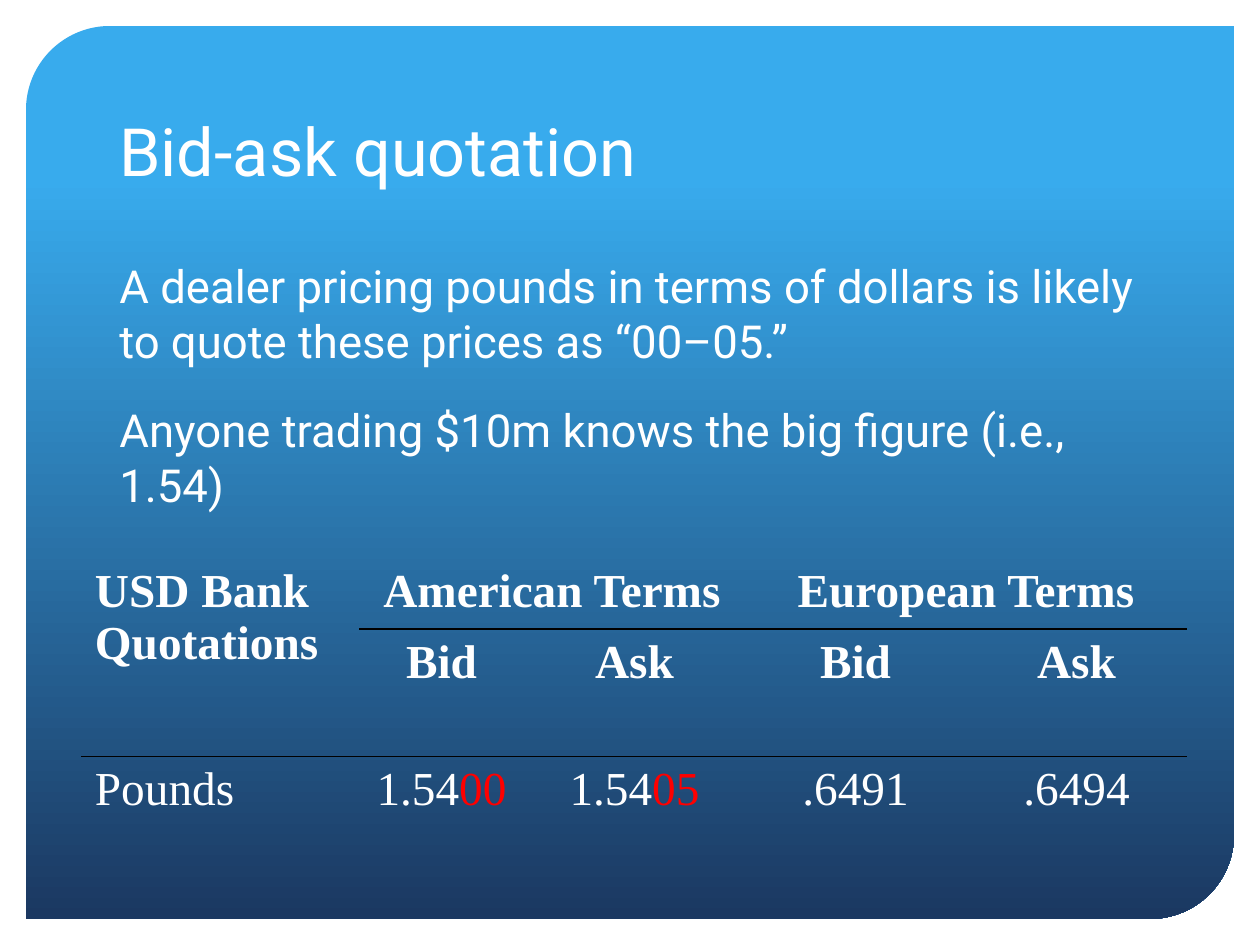
from lxml.etree import SubElement
from pptx import Presentation
from pptx.dml.color import RGBColor
from pptx.enum.shapes import MSO_SHAPE
from pptx.enum.text import MSO_ANCHOR, PP_ALIGN
from pptx.oxml.ns import qn
from pptx.util import Emu, Pt

WHITE = RGBColor(0xFF, 0xFF, 0xFF)
RED = RGBColor(0xFF, 0x00, 0x00)
SKY = RGBColor(0x38, 0xAB, 0xED)
NAVY = RGBColor(0x1B, 0x38, 0x61)
BLACK = "000000"


def px(*lengths):
    return [Emu(length * 914400 // 126) for length in lengths]


def set_borders(cell, black_sides):
    """Draw 1 pt black lines on the given sides and none on the others."""
    properties = cell._tc.get_or_add_tcPr()
    for position, side in enumerate(("L", "R", "T", "B")):
        line = SubElement(properties, qn(f"a:ln{side}"), w="12700")
        if side in black_sides:
            fill = SubElement(line, qn("a:solidFill"))
            SubElement(fill, qn("a:srgbClr"), val=BLACK)
        else:
            SubElement(line, qn("a:noFill"))
        properties.insert(position, line)


prs = Presentation()
prs.slide_width, prs.slide_height = px(1260, 945)
slide = prs.slides.add_slide(prs.slide_layouts[6])

# Gradient panel
panel = slide.shapes.add_shape(MSO_SHAPE.ROUND_2_DIAG_RECTANGLE, *px(26, 26, 1208, 893))
panel.adjustments[0] = 0.094
panel.adjustments[1] = 0
panel.shadow.inherit = False
panel.line.fill.background()
panel.fill.gradient()
panel.fill.gradient_angle = 270
for stop, position, color in zip(panel.fill.gradient_stops, (0.17, 1), (SKY, NAVY)):
    stop.position = position
    stop.color.rgb = color

# Title and body
TEXTS = [
    ((107, 53, 1045, 143), MSO_ANCHOR.BOTTOM, 38, ["Bid-ask quotation"]),
    ((107, 252, 1045, 580), MSO_ANCHOR.TOP, 26, [
        "A dealer pricing pounds in terms of dollars is likely to quote these prices as “00–05.”",
        "Anyone trading $10m knows the big figure (i.e., 1.54)",
    ]),
]
for box, anchor, size, paragraphs in TEXTS:
    frame = slide.shapes.add_textbox(*px(*box)).text_frame
    frame.word_wrap = True
    frame.vertical_anchor = anchor
    for index, text in enumerate(paragraphs):
        paragraph = frame.add_paragraph() if index else frame.paragraphs[0]
        paragraph.text = text
        if index:
            paragraph.space_before = Pt(20)
        paragraph.font.name = "Roboto"
        paragraph.font.size = Pt(size)
        paragraph.font.color.rgb = WHITE

# Quotation table: each cell holds its white text, then any red digits
COLUMNS = [278, 165, 221, 221, 221]
ROWS = [
    [["USD Bank Quotations"], ["American Terms"], [], ["European Terms"], []],
    [[], ["Bid"], ["Ask"], ["Bid"], ["Ask"]],
    [["Pounds"], ["1.54", "00"], ["1.54", "05"], [".6491"], [".6494"]],
]
quotes = slide.shapes.add_table(3, 5, *px(81, 558, sum(COLUMNS), 213)).table
quotes.first_row = quotes.horz_banding = False
for column, width in zip(quotes.columns, px(*COLUMNS)):
    column.width = width
for first, last in (((0, 0), (1, 0)), ((0, 1), (0, 2)), ((0, 3), (0, 4))):
    quotes.cell(*first).merge(quotes.cell(*last))

for row, values in enumerate(ROWS):
    for column, parts in enumerate(values):
        cell = quotes.cell(row, column)
        cell.fill.background()
        set_borders(cell, ("B", "TB", "T")[row])
        cell.margin_left, cell.margin_right = px(14, 14)
        cell.margin_top, cell.margin_bottom = px(7, 7)
        paragraph = cell.text_frame.paragraphs[0]
        paragraph.alignment = PP_ALIGN.CENTER if column else PP_ALIGN.LEFT
        paragraph.font.name = "Times New Roman"
        paragraph.font.size = Pt(27)
        paragraph.font.bold = row < 2
        for part, color in zip(parts, (WHITE, RED)):
            run = paragraph.add_run()
            run.text = part
            run.font.color.rgb = color

prs.save("out.pptx")
